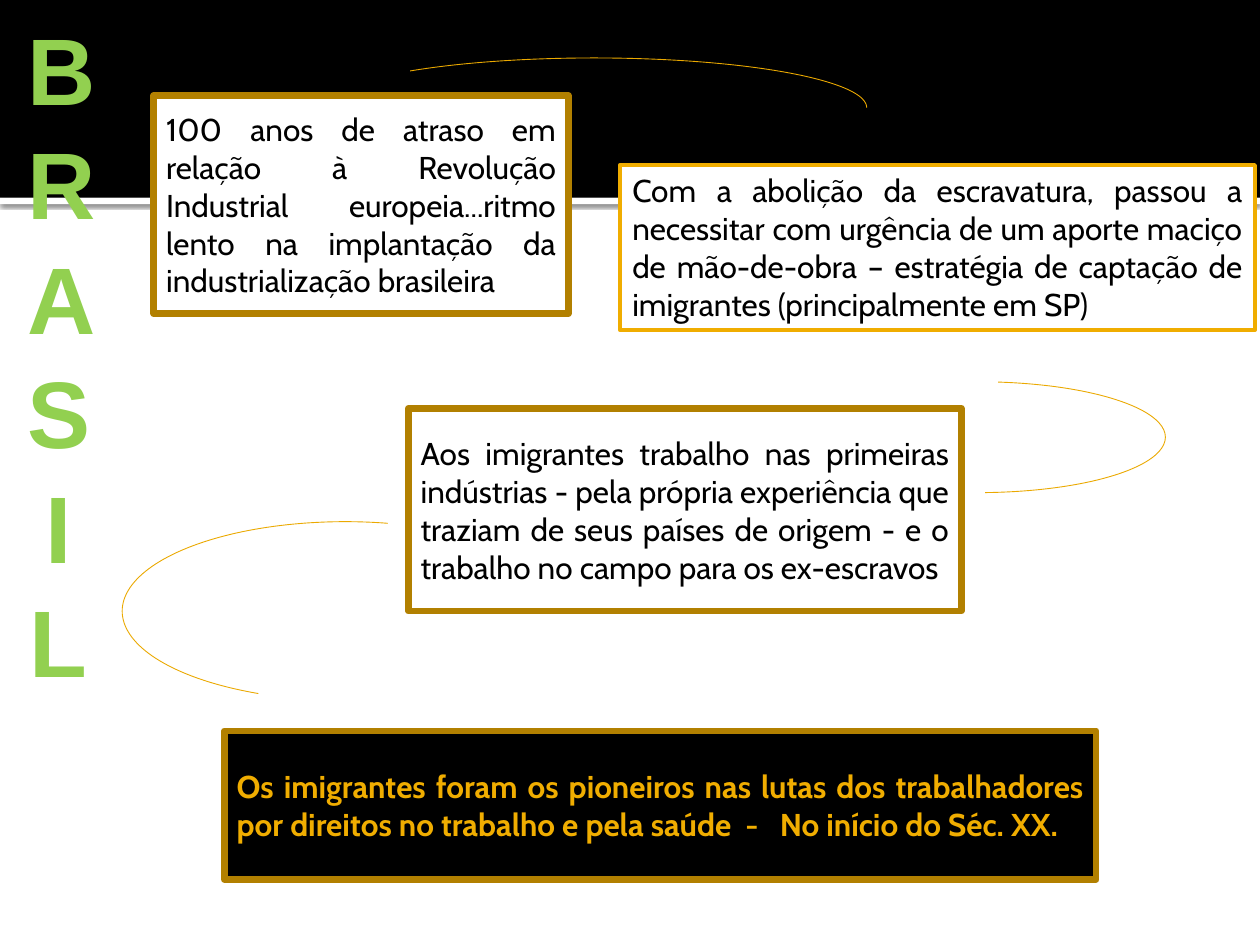
from dataclasses import dataclass

import pptx
import pptx.dml.color
import pptx.enum.shapes
import pptx.enum.text
import pptx.oxml
import pptx.oxml.ns
import pptx.util

Inches = pptx.util.Inches
Pt = pptx.util.Pt
MSO_SHAPE = pptx.enum.shapes.MSO_SHAPE
PP_ALIGN = pptx.enum.text.PP_ALIGN
MSO_ANCHOR = pptx.enum.text.MSO_ANCHOR


@dataclass(frozen=True)
class Theme:
    black: str = "000000"
    white: str = "FFFFFF"
    gold: str = "F0AD00"
    dark_gold: str = "B28000"
    arc_gold: str = "EBA900"
    green: str = "92D050"
    body_font: str = "Cabin"
    title_font: str = "Arial"
    body_size: float = 18
    title_size: float = 54
    title_pitch: float = 65.4


THEME = Theme()


@dataclass(frozen=True)
class Box:
    left: float
    top: float
    width: float
    height: float


@dataclass(frozen=True)
class Card:
    box: Box
    text: str
    fill: str = THEME.white
    border: str = THEME.dark_gold
    border_width: float = 3.78
    color: str = THEME.black
    bold: bool = False
    anchor: MSO_ANCHOR = MSO_ANCHOR.MIDDLE


@dataclass(frozen=True)
class Arc:
    box: Box
    start_degrees: float
    end_degrees: float
    flipped: bool = False


BLACK_BAND = Box(0, 0, 10, 1.57)
WHITE_STRIP = Box(0, 1.57, 10, 0.05)
TITLE_BOX = Box(0.12, 0.03, 0.69, 5.55)

CARDS = [
    Card(
        Box(1.22, 0.76, 3.29, 1.73),
        "100 anos de atraso em relação à Revolução Industrial "
        "europeia...ritmo lento na implantação da industrialização brasileira",
    ),
    Card(
        Box(3.24, 3.24, 4.39, 1.61),
        "Aos imigrantes trabalho nas primeiras indústrias - pela própria "
        "experiência que traziam de seus países de origem - e o trabalho "
        "no campo para os ex-escravos",
    ),
    Card(
        Box(1.78, 5.8, 6.92, 1.18),
        "Os imigrantes foram os pioneiros nas lutas dos trabalhadores por "
        "direitos no trabalho e pela saúde  -   No início do Séc. XX.",
        fill=THEME.black,
        color=THEME.gold,
        bold=True,
    ),
    Card(
        Box(4.92, 1.31, 5.04, 1.31),
        "Com a abolição da escravatura, passou a necessitar com urgência de "
        "um aporte maciço de mão-de-obra – estratégia de captação de "
        "imigrantes (principalmente em SP)",
        border=THEME.gold,
        border_width=2.25,
        anchor=MSO_ANCHOR.TOP,
    ),
]

ARCS = [
    Arc(Box(2.55, 0.46, 4.33, 0.79), 191.31, 0),
    Arc(Box(6.28, 3.03, 2.97, 0.88), 289.84, 83.08),
    Arc(Box(0.97, 4.14, 3.54, 1.42), 244.11, 43.52, flipped=True),
]


def rgb(value: str) -> pptx.dml.color.RGBColor:
    return pptx.dml.color.RGBColor.from_string(value)


def lengths(box: Box) -> list[pptx.util.Length]:
    return [Inches(value) for value in (box.left, box.top, box.width, box.height)]


def draw_rectangle(slide: pptx.slide.Slide, box: Box, fill: str):
    shape = slide.shapes.add_shape(MSO_SHAPE.RECTANGLE, *lengths(box))
    shape.shadow.inherit = False
    shape.fill.solid()
    shape.fill.fore_color.rgb = rgb(fill)
    shape.line.fill.background()
    return shape


def draw_header(slide: pptx.slide.Slide) -> None:
    strip = draw_rectangle(slide, WHITE_STRIP, THEME.white)
    effects = strip._element.spPr.find(pptx.oxml.ns.qn("a:effectLst"))
    effects.append(pptx.oxml.parse_xml(
        f'<a:outerShdw {pptx.oxml.ns.nsdecls("a")} blurRad="{Pt(2.5)}" '
        f'dist="{Pt(0.8)}" dir="5400000" algn="tl" rotWithShape="0">'
        f'<a:srgbClr val="{THEME.black}"><a:alpha val="60000"/></a:srgbClr>'
        "</a:outerShdw>"
    ))
    draw_rectangle(slide, BLACK_BAND, THEME.black)


def draw_card(slide: pptx.slide.Slide, card: Card) -> None:
    shape = draw_rectangle(slide, card.box, card.fill)
    shape.line.color.rgb = rgb(card.border)
    shape.line.width = Pt(card.border_width)
    frame = shape.text_frame
    frame.word_wrap = True
    frame.vertical_anchor = card.anchor
    paragraph = frame.paragraphs[0]
    paragraph.text = card.text
    paragraph.alignment = PP_ALIGN.JUSTIFY
    paragraph.font.name = THEME.body_font
    paragraph.font.size = Pt(THEME.body_size)
    paragraph.font.bold = card.bold
    paragraph.font.color.rgb = rgb(card.color)


def draw_arc(slide: pptx.slide.Slide, arc: Arc) -> None:
    shape = slide.shapes.add_shape(MSO_SHAPE.ARC, *lengths(arc.box))
    shape.shadow.inherit = False
    shape.fill.background()
    shape.line.color.rgb = rgb(THEME.arc_gold)
    shape.line.width = Pt(0.5)
    shape.adjustments[0] = arc.start_degrees * 0.6
    shape.adjustments[1] = arc.end_degrees * 0.6
    if arc.flipped:
        shape._element.spPr.xfrm.set("flipH", "1")


def draw_title(slide: pptx.slide.Slide) -> None:
    frame = slide.shapes.add_textbox(*lengths(TITLE_BOX)).text_frame
    frame.word_wrap = True
    paragraph = frame.paragraphs[0]
    paragraph.text = "BRASIL"
    paragraph.alignment = PP_ALIGN.CENTER
    paragraph.line_spacing = Pt(THEME.title_pitch)
    paragraph.font.name = THEME.title_font
    paragraph.font.size = Pt(THEME.title_size)
    paragraph.font.bold = True
    paragraph.font.color.rgb = rgb(THEME.green)


def main() -> None:
    presentation = pptx.Presentation()
    presentation.slide_width = Inches(10)
    presentation.slide_height = Inches(7.5)
    slide = presentation.slides.add_slide(presentation.slide_layouts[6])
    draw_header(slide)
    for arc in ARCS:
        draw_arc(slide, arc)
    draw_title(slide)
    for card in CARDS:
        draw_card(slide, card)
    presentation.save("out.pptx")


if __name__ == "__main__":
    main()
